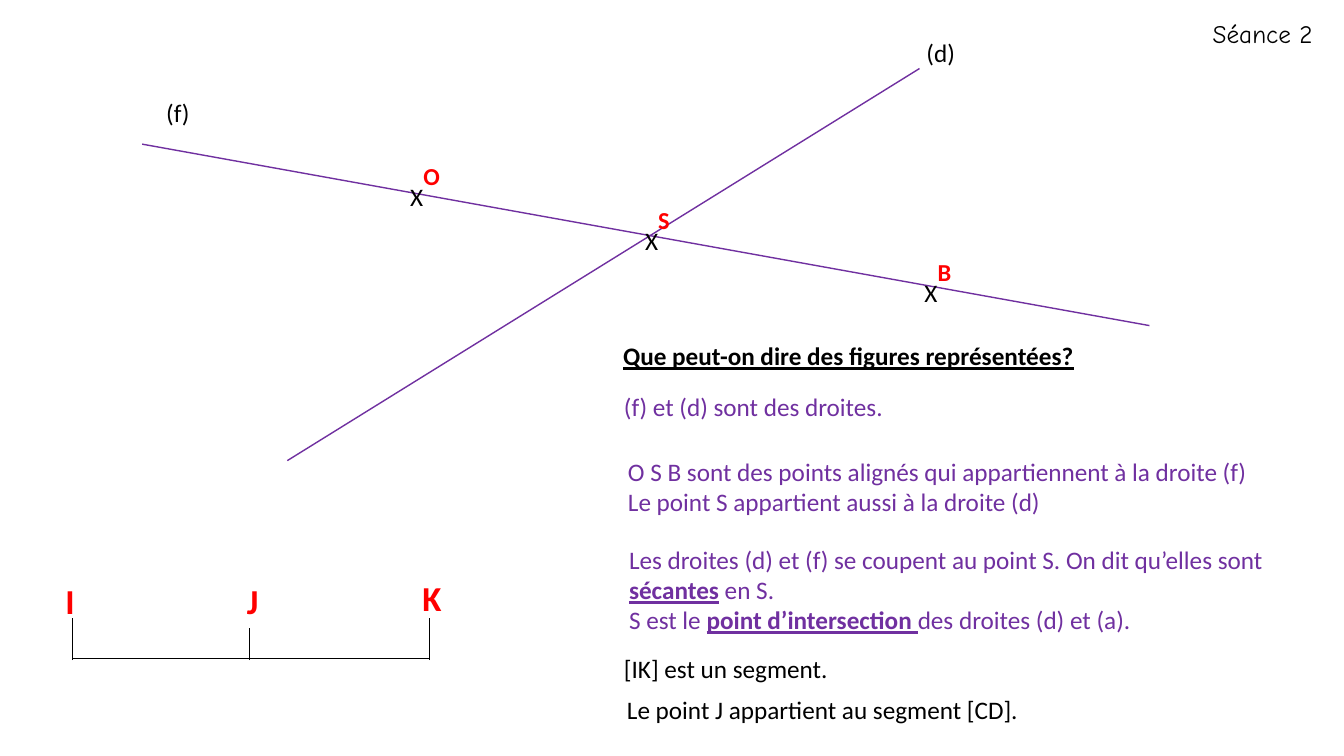
from dataclasses import dataclass

from lxml.etree import SubElement
from pptx import Presentation
from pptx.dml.color import RGBColor
from pptx.enum.shapes import MSO_CONNECTOR
from pptx.enum.text import MSO_ANCHOR, MSO_AUTO_SIZE, PP_ALIGN
from pptx.oxml.ns import qn
from pptx.util import Inches, Pt


@dataclass(frozen=True)
class Theme:
    """Colours, fonts and sizes of the lesson."""
    black: str = "000000"
    red: str = "FF0000"
    purple: str = "7030A0"
    font: str = "Calibri"
    session_font: str = "Comic Neue"
    text_size: float = 18
    point_size: float = 30
    end_size: float = 25
    line_width: float = 1
    segment_width: float = 0.5


THEME = Theme()


def add_run(paragraph, text, *, size=THEME.text_size, color=THEME.black,
            font=THEME.font, bold=False, underline=False, baseline=0):
    """Add formatted text to a paragraph."""
    run = paragraph.add_run()
    run.text = text
    run.font.name = font
    run.font.size = Pt(size)
    run.font.bold = bold
    run.font.underline = underline
    run.font.color.rgb = RGBColor.from_string(color)
    if baseline:
        run.font._element.set("baseline", str(baseline * 1000))


def fill_frame(frame, paragraphs, wrap=False, **style):
    """Fill a text frame with paragraphs made of (text, extra format) pairs."""
    frame.word_wrap = wrap
    frame.auto_size = MSO_AUTO_SIZE.NONE
    frame.vertical_anchor = MSO_ANCHOR.TOP
    for index, parts in enumerate(paragraphs):
        paragraph = frame.add_paragraph() if index else frame.paragraphs[0]
        paragraph.alignment = PP_ALIGN.LEFT
        for text, extra in parts:
            add_run(paragraph, text, **{**style, **extra})


def add_text(shapes, box, paragraphs, **style):
    """Add a text box at the given left, top, width and height."""
    shape = shapes.add_textbox(*map(Inches, box))
    fill_frame(shape.text_frame, paragraphs, **style)


def add_line(shapes, start, end, color, width):
    """Draw a plain line between two points."""
    line = shapes.add_connector(
        MSO_CONNECTOR.STRAIGHT, *map(Inches, (*start, *end)))
    line.line.color.rgb = RGBColor.from_string(color)
    line.line.width = Pt(width)
    SubElement(line._element.spPr, qn("a:effectLst"))


def add_crossing_lines(slide, left, top):
    """Draw lines (f) and (d) with their names and marked points."""
    lines = [
        ("(f)", (0, 1.11), (9.99, 2.91), (0.14, 0.6, 0.44)),
        ("(d)", (1.44, 4.25), (7.71, 0.36), (7.68, 0, 0.49)),
    ]
    for name, start, end, (x, y, width) in lines:
        add_line(slide.shapes, (left + start[0], top + start[1]),
                 (left + end[0], top + end[1]), THEME.purple, THEME.line_width)
        add_text(slide.shapes, (left + x, top + y, width, 0.4), [[(name, {})]])
    points = [("O", 2.56, 1.23, 0.52), ("S", 4.89, 1.67, 0.47),
              ("B", 7.66, 2.18, 0.49)]
    raised = {"size": THEME.point_size, "color": THEME.red,
              "bold": True, "baseline": 50}
    for name, x, y, width in points:
        add_text(slide.shapes, (left + x, top + y, width, 0.61),
                 [[("X", {}), (name, raised)]])


def add_segment(slide, left, bottom, length):
    """Draw segment [IK] with ticks and names at I, J and K."""
    shapes = slide.shapes.add_group_shape().shapes
    add_line(shapes, (left, bottom), (left + length, bottom),
             THEME.black, THEME.segment_width)
    marks = [("I", 0, 0.4, -0.17, 0.83), ("J", 1.75, 0.3, -0.12, 0.83),
             ("K", length, 0.4, -0.17, 0.86)]
    for name, offset, tick, shift, rise in marks:
        x = left + offset
        add_line(shapes, (x, bottom + 0.02), (x, bottom - tick),
                 THEME.black, THEME.segment_width)
        add_text(shapes, (x + shift, bottom - rise, 0.36, 0.52), [[(name, {})]],
                 wrap=True, size=THEME.end_size, color=THEME.red, bold=True)


def add_question(slide, left, top):
    """Place the question as title, with its answers below."""
    title = slide.shapes.title
    title.left, title.top, title.width, title.height = map(
        Inches, (left, top, 6.96, 0.4))
    fill_frame(title.text_frame,
               [[("Que peut-on dire des figures représentées?", {})]],
               wrap=True, bold=True, underline=True)
    key = {"bold": True, "underline": True}
    answers = [
        ((0.01, 0.5, 2.86, 0.4), THEME.purple, False,
         [[("(f) et (d) sont des droites.", {})]]),
        ((0.05, 1.15, 6.47, 0.71), THEME.purple, False,
         [[("O S B sont des points alignés qui appartiennent à la droite (f)", {})],
          [("Le point S appartient aussi à la droite (d)", {})]]),
        ((0.06, 2.02, 7.41, 1.01), THEME.purple, True,
         [[("Les droites (d) et (f) se coupent au point S. On dit qu’elles sont ", {}),
           ("sécantes", key), (" en S.", {})],
          [("S est le ", {}), ("point d’intersection ", key),
           ("des droites (d) et (a).", {})]]),
        ((0.01, 3.1, 2.3, 0.4), THEME.black, False,
         [[("[IK] est un segment.", {})]]),
        ((0.04, 3.51, 4.17, 0.4), THEME.black, False,
         [[("Le point J appartient au segment [CD].", {})]]),
    ]
    for (x, y, width, height), color, wrap, paragraphs in answers:
        add_text(slide.shapes, (left + x, top + y, width, height), paragraphs,
                 wrap=wrap, color=color)


def main():
    """Build the geometry lesson slide."""
    presentation = Presentation()
    presentation.slide_width = Inches(13.33)
    presentation.slide_height = Inches(7.5)
    slide = presentation.slides.add_slide(presentation.slide_layouts[5])
    add_crossing_lines(slide, 1.41, 0.32)
    add_segment(slide, 0.72, 6.53, 3.54)
    add_question(slide, 6.08, 3.33)
    add_text(slide.shapes, (11.93, 0.13, 1.27, 0.4), [[("Séance 2", {})]],
             font=THEME.session_font)
    presentation.save("out.pptx")


if __name__ == "__main__":
    main()
